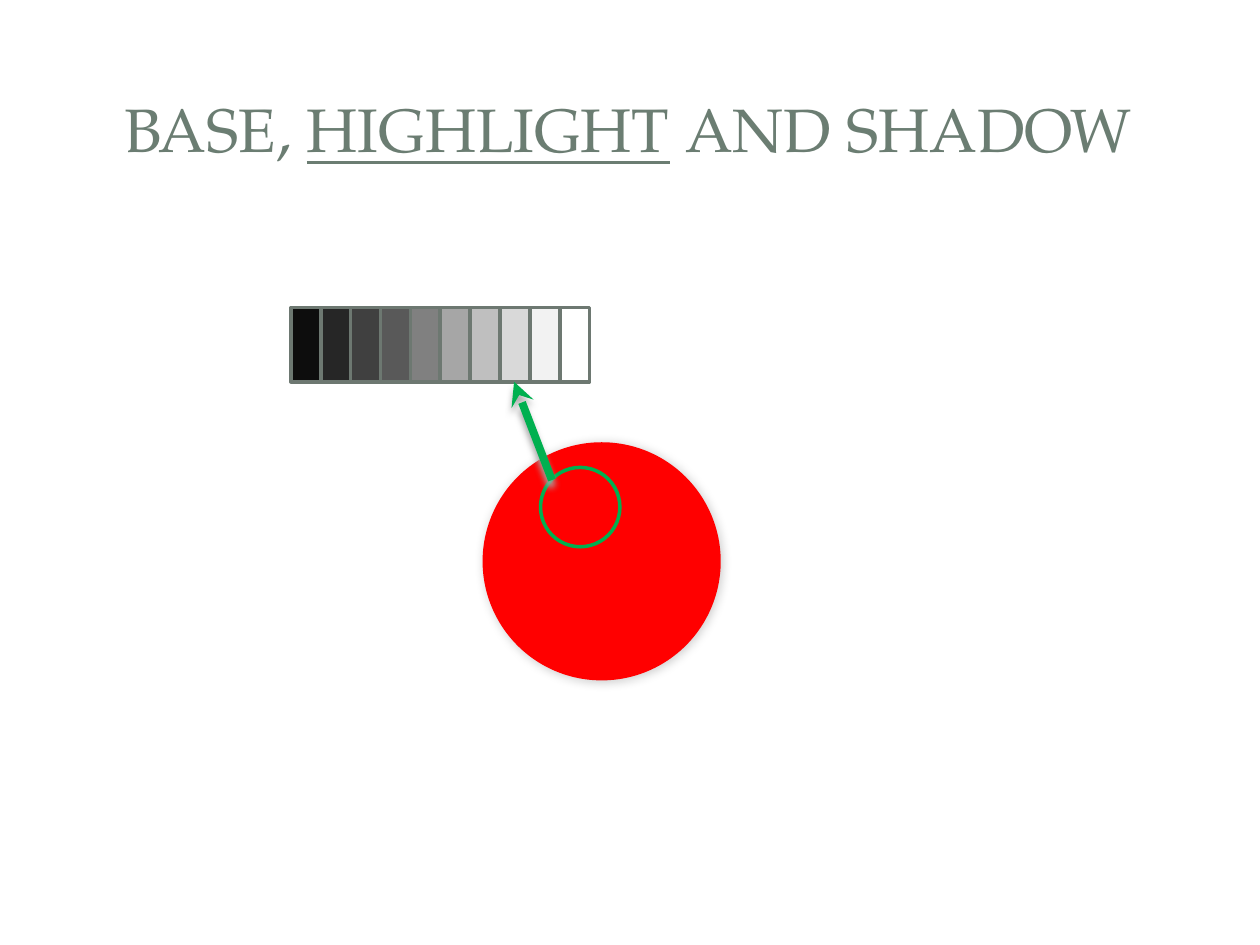
from lxml import etree
from pptx import Presentation
from pptx import util as u
from pptx.dml.color import RGBColor
from pptx.enum import shapes, text
from pptx.oxml import ns

SCALE = 9144
SAGE = RGBColor(0x6B, 0x7D, 0x72)
BORDER = RGBColor(0x6D, 0x78, 0x71)
RED = RGBColor(0xFF, 0x00, 0x00)
GREEN = RGBColor(0x00, 0xB0, 0x50)
BLACK = RGBColor(0x00, 0x00, 0x00)
SILVER = RGBColor(0xA6, 0xA6, 0xA6)
GRAYS = [RGBColor(level, level, level) for level in
         (0x0D, 0x26, 0x40, 0x59, 0x80, 0xA6, 0xBF, 0xD9, 0xF2, 0xFF)]
FONT = "TeX Gyre Pagella"


def px(*lengths):
    """Turn px lengths into EMU."""
    return [u.Emu(round(length * SCALE)) for length in lengths]


def add_shadow(shape, color, opacity, blur, distance, angle):
    """Give a shape an outer shadow, with lengths in points."""
    properties = shape._element.spPr
    for old in properties.findall(ns.qn("a:effectLst")):
        properties.remove(old)
    effects = etree.SubElement(properties, ns.qn("a:effectLst"))
    shadow = etree.SubElement(
        effects, ns.qn("a:outerShdw"), blurRad=str(u.Pt(blur)),
        dist=str(u.Pt(distance)), dir=str(angle * 60000), rotWithShape="0")
    tint = etree.SubElement(shadow, ns.qn("a:srgbClr"), val=str(color))
    etree.SubElement(tint, ns.qn("a:alpha"), val=str(opacity * 1000))


def add_figure(parent, kind, box, fill=None, line=None):
    """Add a preset shape with an optional fill and 2 pt outline."""
    shape = parent.add_shape(kind, *px(*box))
    shape.shadow.inherit = False
    if fill is None:
        shape.fill.background()
    else:
        shape.fill.solid()
        shape.fill.fore_color.rgb = fill
    if line is None:
        shape.line.fill.background()
    else:
        shape.line.color.rgb = line
        shape.line.width = u.Pt(2)
    return shape


def add_title(page, box):
    """Write the centred title with its underlined key word."""
    frame = page.shapes.add_textbox(*px(*box)).text_frame
    frame.word_wrap = True
    frame.vertical_anchor = text.MSO_ANCHOR.MIDDLE
    para = frame.paragraphs[0]
    para.alignment = text.PP_ALIGN.CENTER
    for words, underlined in (("BASE, ", False), ("HIGHLIGHT", True),
                              (" AND SHADOW", False)):
        span = para.add_run()
        span.text = words
        span.font.name = FONT
        span.font.size = u.Pt(35)
        span.font.color.rgb = SAGE
        span.font.underline = underlined


def add_value_scale(page, box):
    """Draw the row of gray swatches, dark to light, across the box."""
    left, top, width, height = box
    swatch = width / len(GRAYS)
    group = page.shapes.add_group_shape()
    for index, gray in enumerate(GRAYS):
        add_figure(group.shapes, shapes.MSO_SHAPE.RECTANGLE,
                   (left + index * swatch, top, swatch, height), gray, BORDER)


def add_ball(page, box):
    """Draw the red ball with its soft shadow."""
    ball = add_figure(page.shapes, shapes.MSO_SHAPE.OVAL, box, RED)
    add_shadow(ball, BLACK, 20, 6, 1, 45)


def add_highlight(page, box):
    """Ring the highlight and point from it to its gray value."""
    left, top, width, height = box
    add_figure(page.shapes, shapes.MSO_SHAPE.OVAL, box, line=GREEN)
    arrow = page.shapes.add_connector(
        shapes.MSO_CONNECTOR.STRAIGHT,
        *px(left + 9, top + 10, left - 21, top - 68))
    arrow.line.color.rgb = GREEN
    arrow.line.width = u.Pt(4.5)
    etree.SubElement(arrow.line._get_or_add_ln(), ns.qn("a:tailEnd"),
                     type="stealth")
    add_shadow(arrow, SILVER, 100, 4, 4, 90)


def main():
    """Build and save the slide."""
    deck = Presentation()
    deck.slide_width, deck.slide_height = px(1000, 750)
    page = deck.slides.add_slide(deck.slide_layouts[6])
    add_title(page, (47, 45, 903, 114))
    add_ball(page, (383, 351, 189, 189))
    add_value_scale(page, (231, 244, 237, 59))
    add_highlight(page, (429, 371, 63, 63))
    deck.save("out.pptx")


if __name__ == "__main__":
    main()
